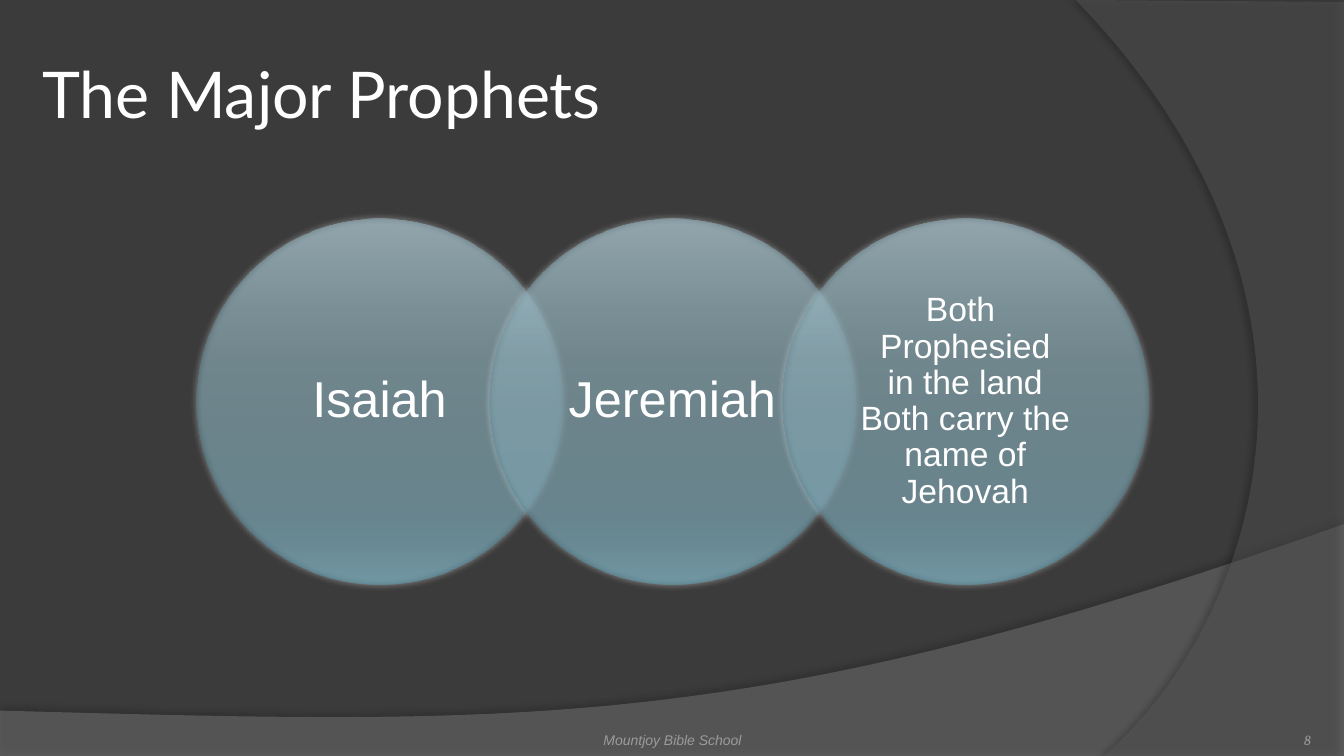
from lxml import etree
from pptx import Presentation
from pptx.dml.color import RGBColor
from pptx.enum.shapes import MSO_SHAPE
from pptx.enum.text import MSO_ANCHOR, PP_ALIGN
from pptx.oxml import parse_xml
from pptx.oxml.ns import qn
from pptx.util import Inches, Pt

NS = "http://schemas.openxmlformats.org/drawingml/2006/main"
TITLE = "The Major Prophets"
CIRCLES = [
    ("Isaiah", 36, 0.05),
    ("Jeremiah", 36, 0.05),
    ("Both \vProphesied\vin the land\vBoth carry the name of\vJehovah", 24, 0.03),
]
STOPS = [(0, "9EC4D2"), (25, "6C97A5"), (38, "5B8694"), (55, "51808F"),
         (80, "4A8294"), (88, "4A8BA0"), (100, "5DAAC2")]
WAVES = [
    dict(corners=[(0, 7.05), (0, 7.5), (13.33, 7.5)],
         curve=[(13.33, 5.2), (7.45, 7.29), (5.21, 7.19), (0, 7.05)],
         color="7F7F7F", alpha=45, shadow=("000000", 35, 4, 3.5, 270)),
    dict(corners=[(13.33, 0.02), (13.33, 7.5)],
         curve=[(10.95, 7.5), (12.46, 6.19), (13.57, 3), (10.67, 0)],
         color="5E5E5E", alpha=40, shadow=("000000", 45, 4, 4, 180)),
]
CIRCLE_LEFT, CIRCLE_TOP, DIAMETER = 1.95, 2.17, 3.63
PITCH = DIAMETER * 0.8
LABEL_INSET, LABEL_SIZE = 0.53, 2.57
CURVE_STEPS = 60


def rgb(value):
    return RGBColor.from_string(value)


def color_xml(value, alpha):
    return f'<a:srgbClr val="{value}"><a:alpha val="{alpha * 1000}"/></a:srgbClr>'


def add_shadow(sp, color, alpha, blur, dist, angle):
    sp.shadow.inherit = False
    effects = sp._element.spPr.find(qn("a:effectLst"))
    effects.append(parse_xml(
        f'<a:outerShdw xmlns:a="{NS}" blurRad="{Pt(blur)}" dist="{Pt(dist)}" '
        f'dir="{angle * 60000}" algn="ctr" rotWithShape="0">'
        f'{color_xml(color, alpha)}</a:outerShdw>'))


def bezier(p0, p1, p2, p3):
    for i in range(CURVE_STEPS + 1):
        t = i / CURVE_STEPS
        u = 1 - t
        yield tuple(u**3 * a + 3 * u * u * t * b + 3 * u * t * t * c + t**3 * d
                    for a, b, c, d in zip(p0, p1, p2, p3))


def add_wave(s, corners, curve, color, alpha, shadow):
    points = [(Inches(x), Inches(y)) for x, y in [*corners, *bezier(*curve)]]
    builder = s.shapes.build_freeform(*points[0])
    builder.add_line_segments(points[1:], close=True)
    sp = builder.convert_to_shape()
    sp.fill.solid()
    sp.fill.fore_color.rgb = rgb(color)
    clr = sp._element.spPr.find(qn("a:solidFill"))[0]
    etree.SubElement(clr, qn("a:alpha")).set("val", str(alpha * 1000))
    sp.line.fill.background()
    add_shadow(sp, *shadow)


def add_circle(s, left):
    sp = s.shapes.add_shape(MSO_SHAPE.OVAL, Inches(left), Inches(CIRCLE_TOP),
                            Inches(DIAMETER), Inches(DIAMETER))
    sp.line.fill.background()
    stops = "".join(f'<a:gs pos="{pos * 1000}">{color_xml(color, 50)}</a:gs>'
                    for pos, color in STOPS)
    sp._element.spPr.find(qn("a:prstGeom")).addnext(parse_xml(
        f'<a:gradFill xmlns:a="{NS}" rotWithShape="1"><a:gsLst>{stops}</a:gsLst>'
        '<a:lin ang="5400000" scaled="0"/></a:gradFill>'))
    add_shadow(sp, "FFFFFF", 78, 5, 0, 0)


def write(sp, text, size, font, color, align, anchor, margins, italic=False):
    tf = sp.text_frame
    tf.word_wrap = True
    tf.vertical_anchor = anchor
    tf.margin_left, tf.margin_top, tf.margin_right, tf.margin_bottom = map(Inches, margins)
    tf.text = text
    p = tf.paragraphs[0]
    p.alignment = align
    p.font.size = Pt(size)
    p.font.name = font
    p.font.italic = italic
    p.font.color.rgb = rgb(color)
    return p


def add_text(s, box, *style, **options):
    return write(s.shapes.add_textbox(*map(Inches, box)), *style, **options)


def main():
    prs = Presentation()
    prs.slide_width, prs.slide_height = Inches(13.33), Inches(7.5)
    s = prs.slides.add_slide(prs.slide_layouts[5])
    s.background.fill.solid()
    s.background.fill.fore_color.rgb = rgb("3B3B3B")

    for wave in WAVES:
        add_wave(s, **wave)

    title = s.shapes.title
    title.left, title.top, title.width, title.height = map(Inches, (0.37, 0.3, 12.6, 1.25))
    write(title, TITLE, 46, "Lato", "FFFFFF", PP_ALIGN.LEFT, MSO_ANCHOR.MIDDLE, [0.05] * 4)
    s.shapes._spTree.append(title._element)

    for i, (label, size, margin) in enumerate(CIRCLES):
        left = CIRCLE_LEFT + i * PITCH
        add_circle(s, left)
        box = (left + LABEL_INSET, CIRCLE_TOP + LABEL_INSET, LABEL_SIZE, LABEL_SIZE)
        p = add_text(s, box, label, size, "Arial", "FFFFFF", PP_ALIGN.CENTER,
                     MSO_ANCHOR.MIDDLE, (0.2, margin, 0.2, margin))
        p.line_spacing = 0.9

    add_text(s, (4.56, 7.02, 4.22, 0.4), "Mountjoy Bible School", 10, "Arial", "9D9B9A",
             PP_ALIGN.CENTER, MSO_ANCHOR.BOTTOM, (0, 0.05, 0, 0), italic=True)
    add_text(s, (11.89, 7.02, 1.11, 0.4), "8", 10, "Cambria", "9B9A98",
             PP_ALIGN.RIGHT, MSO_ANCHOR.BOTTOM, [0] * 4, italic=True)
    prs.save("out.pptx")


if __name__ == "__main__":
    main()
